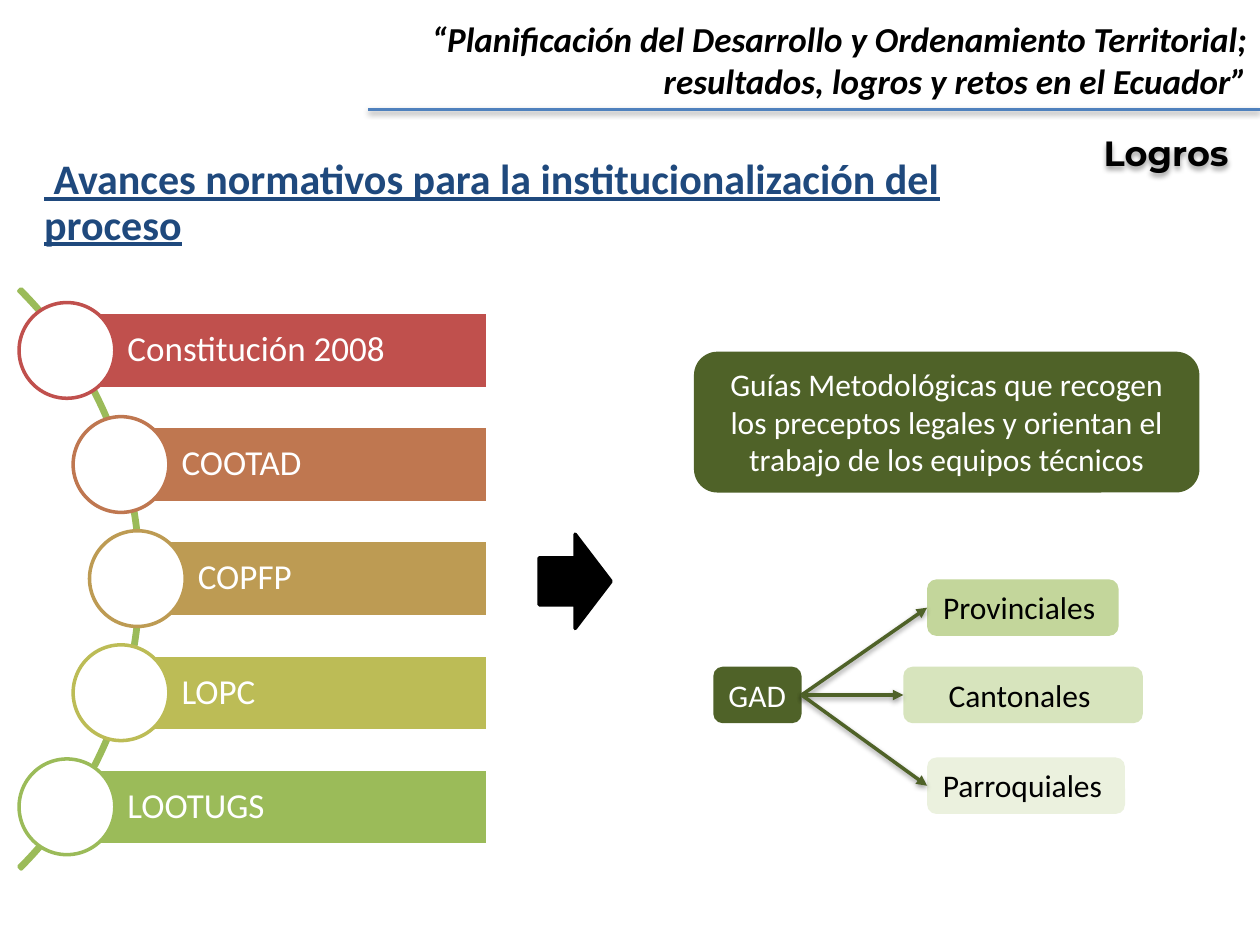
from pptx import Presentation
from pptx.dml.color import RGBColor as RGB
from pptx.enum.shapes import MSO_CONNECTOR, MSO_SHAPE as SHAPE
from pptx.enum.text import MSO_ANCHOR as ANCHOR, PP_ALIGN as ALIGN
from pptx.oxml import parse_xml
from pptx.oxml.ns import nsdecls
from pptx.util import Cm, Pt

BLACK = RGB(0x00, 0x00, 0x00)
WHITE = RGB(0xFF, 0xFF, 0xFF)
BLUE = RGB(0x4F, 0x81, 0xBD)
NAVY = RGB(0x1F, 0x49, 0x7D)
RED = RGB(0xC0, 0x50, 0x4D)
RUST = RGB(0xBF, 0x77, 0x50)
OCHRE = RGB(0xBD, 0x9B, 0x53)
OLIVE = RGB(0xBC, 0xBC, 0x56)
GREEN = RGB(0x9B, 0xBB, 0x59)
DARK_GREEN = RGB(0x4F, 0x62, 0x28)
MID_GREEN = RGB(0xC3, 0xD6, 0x9B)
LIGHT_GREEN = RGB(0xD7, 0xE4, 0xBD)
PALE_GREEN = RGB(0xEB, 0xF1, 0xDE)

LAWS = [
    ("Constitución 2008", RED, 1.35),
    ("COOTAD", RUST, 2.44),
    ("COPFP", OCHRE, 2.77),
    ("LOPC", OLIVE, 2.44),
    ("LOOTUGS", GREEN, 1.35),
]
BAR_TOP, BAR_PITCH, BAR_HEIGHT, BAR_RIGHT = 6.3, 2.3, 1.53, 9.83
CIRCLE = 1.93

LEVELS = [
    ("Provinciales ", MID_GREEN, 18.69, 11.68, 3.86, False),
    ("Cantonales ", LIGHT_GREEN, 18.21, 13.44, 4.83, True),
    ("Parroquiales ", PALE_GREEN, 18.69, 15.27, 3.99, False),
]
BOX_HEIGHT = 1.14


def write(sp, *lines, size=18, color=BLACK, font="Calibri", bold=False,
          italic=False, underline=False, align=ALIGN.LEFT, anchor=ANCHOR.TOP,
          spacing=None, wrap=True, insets=None):
    tf = sp.text_frame
    tf.word_wrap = wrap
    tf.vertical_anchor = anchor
    if insets:
        tf.margin_left, tf.margin_top, tf.margin_right, tf.margin_bottom = map(Cm, insets)
    for i, line in enumerate(lines):
        p = tf.add_paragraph() if i else tf.paragraphs[0]
        p.alignment = align
        if spacing:
            p.line_spacing = spacing
        r = p.add_run()
        r.text = line
        f = r.font
        f.name, f.size = font, Pt(size)
        f.bold, f.italic, f.underline = bold, italic, underline
        f.color.rgb = color


def add_text(s, box, *lines, **fmt):
    write(s.shapes.add_textbox(*map(Cm, box)), *lines, **fmt)


def add_shape(s, kind, box, fill=None, line=None):
    sp = s.shapes.add_shape(kind, *map(Cm, box))
    sp.shadow.inherit = False
    if fill is None:
        sp.fill.background()
    else:
        sp.fill.solid()
        sp.fill.fore_color.rgb = fill
    if line is None:
        sp.line.fill.background()
    else:
        sp.line.color.rgb = line
        sp.line.width = Pt(2)
    return sp


def shadow_xml():
    return parse_xml(
        f'<a:effectLst {nsdecls("a")}><a:outerShdw blurRad="40000" dist="20000" '
        'dir="5400000" rotWithShape="0"><a:srgbClr val="000000">'
        '<a:alpha val="38000"/></a:srgbClr></a:outerShdw></a:effectLst>')


def add_line(s, x1, y1, x2, y2, color, arrow=False):
    c = s.shapes.add_connector(MSO_CONNECTOR.STRAIGHT, *map(Cm, (x1, y1, x2, y2)))
    c.line.color.rgb = color
    c.line.width = Pt(2)
    if arrow:
        c.line._get_or_add_ln().append(
            parse_xml(f'<a:tailEnd {nsdecls("a")} type="triangle"/>'))
    c._element.spPr.append(shadow_xml())


def add_header(s):
    sp = add_shape(s, SHAPE.ROUNDED_RECTANGLE, (20.83, 2.31, 5.56, 1.55))
    sp_pr = sp._element.spPr
    sp_pr.replace(sp_pr.effectLst, shadow_xml())
    write(sp, "Logros ", size=20, font="Montserrat", bold=True,
          align=ALIGN.CENTER, anchor=ANCHOR.MIDDLE)
    add_line(s, 7.42, 2.21, 25.4, 2.21, BLUE)
    add_text(s, (4.27, 0.23, 21.13, 1.96),
             "“Planificación del Desarrollo y Ordenamiento Territorial;",
             "resultados, logros y retos en el Ecuador”",
             size=20, bold=True, italic=True, align=ALIGN.RIGHT)
    add_text(s, (0.64, 3.07, 20.27, 2.11),
             " Avances normativos para la institucionalización del proceso",
             size=24, color=NAVY, bold=True, underline=True, spacing=0.9)


def add_laws(s):
    arc = add_shape(s, SHAPE.BLOCK_ARC, (-13.69, 3.4, 16.54, 16.54), line=GREEN)
    for i, value in enumerate((189, 27, 0.004)):
        arc.adjustments[i] = value
    for i, (name, color, left) in enumerate(LAWS):
        top = BAR_TOP + i * BAR_PITCH
        bar = add_shape(s, SHAPE.RECTANGLE,
                        (left, top, BAR_RIGHT - left, BAR_HEIGHT), color, WHITE)
        write(bar, name, size=20, color=WHITE, anchor=ANCHOR.MIDDLE,
              spacing=0.9, insets=(1.22, 0.15, 0.15, 0.15))
        add_shape(s, SHAPE.OVAL,
                  (left - CIRCLE / 2, top + (BAR_HEIGHT - CIRCLE) / 2, CIRCLE, CIRCLE),
                  WHITE, color)


def add_guides(s):
    guide = add_shape(s, SHAPE.ROUNDED_RECTANGLE, (13.99, 7.09, 10.19, 2.84), DARK_GREEN)
    write(guide, "Guías Metodológicas que recogen los preceptos legales y orientan "
          "el trabajo de los equipos técnicos", color=WHITE, align=ALIGN.CENTER)
    for name, color, left, top, width, wrap in LEVELS:
        box = add_shape(s, SHAPE.ROUNDED_RECTANGLE, (left, top, width, BOX_HEIGHT), color)
        write(box, name, align=ALIGN.CENTER, wrap=wrap)
    gad = add_shape(s, SHAPE.ROUNDED_RECTANGLE, (14.38, 13.44, 1.78, BOX_HEIGHT), DARK_GREEN)
    write(gad, "GAD", color=WHITE, wrap=False)
    for _, _, left, top, _, _ in LEVELS:
        add_line(s, 16.16, 13.44 + BOX_HEIGHT / 2, left, top + BOX_HEIGHT / 2,
                 DARK_GREEN, arrow=True)


def main():
    prs = Presentation()
    prs.slide_width, prs.slide_height = Cm(25.4), Cm(19.05)
    s = prs.slides.add_slide(prs.slide_layouts[6])
    add_header(s)
    add_laws(s)
    add_guides(s)
    add_shape(s, SHAPE.RIGHT_ARROW, (10.87, 10.77, 1.45, 1.9), BLACK, BLACK)
    prs.save("out.pptx")


if __name__ == "__main__":
    main()
